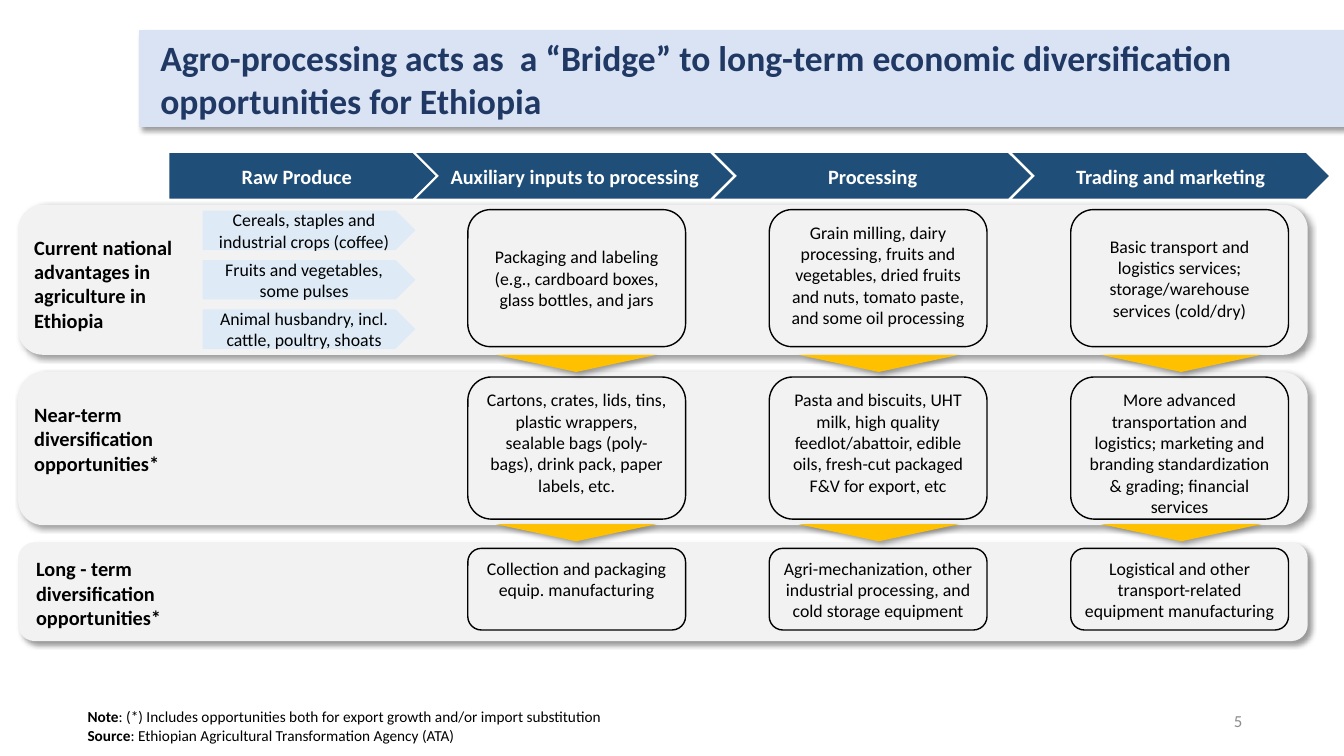
from lxml.etree import SubElement
from pptx import Presentation
from pptx.dml.color import RGBColor
from pptx.enum.shapes import MSO_SHAPE
from pptx.enum.text import MSO_ANCHOR, MSO_AUTO_SIZE, PP_ALIGN
from pptx.oxml.ns import qn
from pptx.util import Pt

SCALE = 9144
FONT = "Calibri"
BLACK = "000000"
GREY = "F2F2F2"
NAVY = "1F4E79"

STAGES = ["Auxiliary inputs to processing", "Processing", "Trading and marketing"]
CROPS = [
    "Cereals, staples and industrial crops (coffee)",
    "Fruits and vegetables, some pulses",
    "Animal husbandry, incl. cattle, poultry, shoats",
]
ROWS = [
    {
        "band": (203, 149), "box": (208, 136),
        "label": (24, 228, 159, 98, "Current national advantages in agriculture in Ethiopia"),
        "cells": [
            ("Packaging and labeling (e.g., cardboard boxes, glass bottles, and jars", "middle"),
            ("Grain milling, dairy processing, fruits and vegetables, dried fruits "
             "and nuts, tomato paste, and some oil processing", "top"),
            ("Basic transport and logistics services; storage/warehouse services (cold/dry)",
             "middle"),
        ],
    },
    {
        "band": (369, 152), "box": (374, 141),
        "label": (24, 394, 159, 98, "Near-term diversification opportunities*"),
        "cells": [
            ("Cartons, crates, lids, tins, plastic wrappers, sealable bags (poly-bags), "
             "drink pack, paper labels, etc.", "top"),
            ("Pasta and biscuits, UHT milk, high quality feedlot/abattoir, edible oils, "
             "fresh-cut packaged F&V for export, etc", "top"),
            ("More advanced transportation and logistics; marketing and branding "
             "standardization & grading; financial services", "top"),
        ],
    },
    {
        "band": (538, 98), "box": (544, 81),
        "label": (26, 547, 157, 79, "Long - term diversification opportunities*"),
        "cells": [
            ("Collection and packaging equip. manufacturing", "top"),
            ("Agri-mechanization, other industrial processing, and cold storage equipment",
             "top"),
            ("Logistical and other transport-related equipment manufacturing", "top"),
        ],
    },
]
NOTES = [
    ("Note", ": (*) Includes opportunities both for export growth and/or import substitution"),
    ("Source", ": Ethiopian Agricultural Transformation Agency (ATA)"),
]


def px(*nums):
    return [round(num * SCALE) for num in nums]


def paint(target, color):
    target.solid()
    target.fore_color.rgb = RGBColor.from_string(color)


def style(para, size, color=BLACK, bold=None, align=PP_ALIGN.LEFT):
    para.alignment = align
    font = para.font
    font.name, font.size, font.bold = FONT, Pt(size), bold
    font.color.rgb = RGBColor.from_string(color)


def write(shape, text, size, color=BLACK, bold=False, align=PP_ALIGN.CENTER,
          anchor="middle"):
    frame = shape.text_frame
    frame.word_wrap = True
    frame.auto_size = MSO_AUTO_SIZE.NONE
    frame.vertical_anchor = MSO_ANCHOR.TOP if anchor == "top" else MSO_ANCHOR.MIDDLE
    frame.text = text
    style(frame.paragraphs[0], size, color, bold, align)


def shade(shape):
    shape.shadow.inherit = False
    effects = shape.element.spPr.find(qn("a:effectLst"))
    outer = SubElement(effects, qn("a:outerShdw"), blurRad=str(Pt(4)), dist=str(Pt(3)),
                       dir="2700000", algn="tl", rotWithShape="0")
    tint = SubElement(outer, qn("a:srgbClr"), val=BLACK)
    SubElement(tint, qn("a:alpha"), val="40000")


def block(slide, kind, place, color, edge=None):
    shape = slide.shapes.add_shape(kind, *px(*place))
    shape.shadow.inherit = False
    paint(shape.fill, color)
    if edge:
        paint(shape.line.fill, edge)
        shape.line.width = Pt(1)
    else:
        shape.line.fill.background()
    return shape


def label(slide, place, text, size, **look):
    box = slide.shapes.add_textbox(*px(*place))
    write(box, text, size, **look)


def title(slide, text):
    head = slide.shapes.title
    head.left, head.top, head.width, head.height = px(138, 30, 1195, 96)
    paint(head.fill, "DAE3F3")
    shade(head)
    write(head, text, 25.4, "203864", True, PP_ALIGN.LEFT)
    head.text_frame.margin_left = px(21)[0]


def stages(slide):
    for i, name in reversed(list(enumerate(STAGES))):
        shape = block(slide, MSO_SHAPE.CHEVRON, (413 + 295.5 * i, 152, 314, 45), NAVY)
        write(shape, name, 14.5, "FFFFFF", True)
    shape = block(slide, MSO_SHAPE.PENTAGON, (168, 152, 264, 45), NAVY)
    write(shape, "Raw Produce", 14.5, "FFFFFF", True)


def band(slide, row):
    top, height = row["band"]
    shade(block(slide, MSO_SHAPE.ROUNDED_RECTANGLE, (18, top, 1279, height), GREY))
    *place, text = row["label"]
    label(slide, place, text, 14.5, bold=True, align=PP_ALIGN.LEFT, anchor="top")
    top, height = row["box"]
    for i, (text, anchor) in enumerate(row["cells"]):
        place = (464 + 299 * i, top, 216, height)
        cell = block(slide, MSO_SHAPE.ROUNDED_RECTANGLE, place, GREY, BLACK)
        write(cell, text, 12.7, anchor=anchor)


def crops(slide):
    for i, text in enumerate(CROPS):
        shape = block(slide, MSO_SHAPE.PENTAGON, (201, 209 + 49 * i, 211, 39), "DEEBF7")
        write(shape, text, 12.7)


def arrows(slide, top):
    for i in range(len(STAGES)):
        place = (492 + 300 * i, top, 159, 17)
        arrow = block(slide, MSO_SHAPE.ISOSCELES_TRIANGLE, place, "FFC000")
        arrow.rotation = 180
        shade(arrow)


def notes(slide):
    frame = slide.shapes.add_textbox(*px(77, 697, 670, 40)).text_frame
    frame.word_wrap = True
    for i, (head, rest) in enumerate(NOTES):
        para = frame.add_paragraph() if i else frame.paragraphs[0]
        style(para, 10.9)
        for text, bold in ((head, True), (rest, False)):
            run = para.add_run()
            run.text, run.font.bold = text, bold


def main():
    deck = Presentation()
    deck.slide_width, deck.slide_height = px(1333, 750)
    slide = deck.slides.add_slide(deck.slide_layouts[5])
    title(slide, "Agro-processing acts as  a “Bridge” to long-term economic "
                 "diversification opportunities for Ethiopia")
    label(slide, (942, 695, 300, 40), "5", 12, color="8C8C8C", align=PP_ALIGN.RIGHT)
    stages(slide)
    for row in ROWS:
        band(slide, row)
    crops(slide)
    for top in (352, 520):
        arrows(slide, top)
    notes(slide)
    deck.save("out.pptx")


if __name__ == "__main__":
    main()
